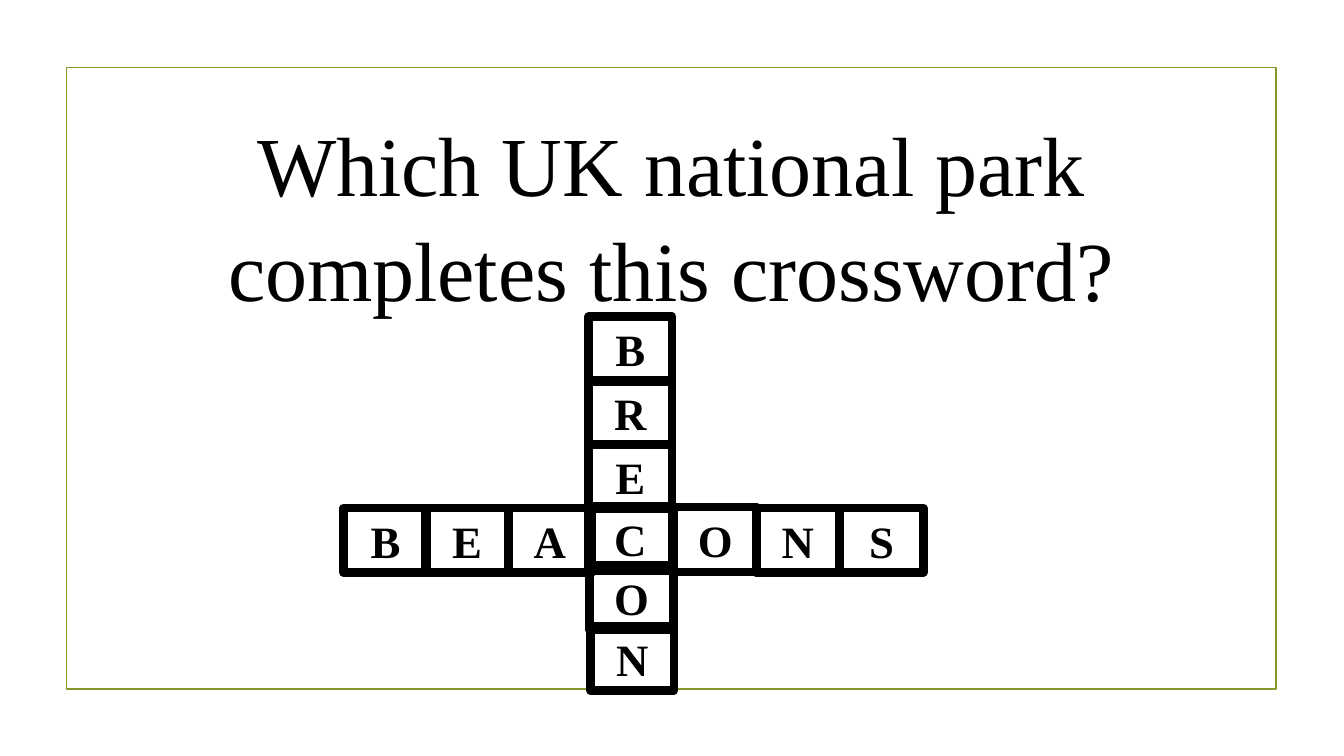
from pptx import Presentation
from pptx.dml.color import RGBColor
from pptx.enum.shapes import MSO_SHAPE
from pptx.enum.text import MSO_ANCHOR, MSO_AUTO_SIZE, PP_ALIGN
from pptx.util import Cm, Pt
from lxml.etree import SubElement
from pptx.oxml.ns import qn

QUESTION = "Which UK national park completes this crossword?"
# Each cell: letter, left and top in centimetres
DOWN = [
    ("B", 14.83, 7.98), ("R", 14.83, 9.58), ("E", 14.83, 11.2),
    ("C", 14.83, 12.75), ("O", 14.86, 14.25), ("N", 14.88, 15.77),
]
# The shared letter C belongs to the word going down
ACROSS = [
    ("B", 8.66, 12.8), ("E", 10.72, 12.8), ("A", 12.8, 12.8),
    ("O", 16.97, 12.78), ("N", 19.05, 12.8), ("S", 21.16, 12.8),
]
CELL_WIDTH, CELL_HEIGHT = Cm(2.11), Cm(1.63)
FONT = "Times New Roman"
BLACK = RGBColor(0x00, 0x00, 0x00)
OLIVE = RGBColor(0x83, 0x99, 0x2A)


def add_outline(slide, left, top, width, height, color, weight):
    shape = slide.shapes.add_shape(MSO_SHAPE.RECTANGLE, left, top, width, height)
    shape.shadow.inherit = False
    shape.fill.background()
    shape.line.color.rgb = color
    shape.line.width = Pt(weight)
    return shape


def write_centred(shape, text, size, bold, anchor):
    frame = shape.text_frame
    frame.word_wrap = True
    frame.auto_size = MSO_AUTO_SIZE.NONE
    frame.vertical_anchor = anchor
    paragraph = frame.paragraphs[0]
    paragraph.alignment = PP_ALIGN.CENTER
    run = paragraph.add_run()
    run.text = text
    run.font.name = FONT
    run.font.size = Pt(size)
    run.font.bold = bold
    run.font.color.rgb = BLACK
    return paragraph


def add_cell(slide, letter, left, top):
    cell = add_outline(slide, Cm(left), Cm(top), CELL_WIDTH, CELL_HEIGHT, BLACK, 6)
    SubElement(cell.line._get_or_add_ln(), qn("a:round"))
    write_centred(cell, letter, 32, True, MSO_ANCHOR.MIDDLE)


def main():
    presentation = Presentation()
    presentation.slide_width, presentation.slide_height = Cm(33.87), Cm(19.05)
    slide = presentation.slides.add_slide(presentation.slide_layouts[5])

    add_outline(slide, Cm(1.68), Cm(1.7), Cm(30.48), Cm(15.67), OLIVE, 1.25)

    title = slide.shapes.title
    title.left, title.top = Cm(1.7), Cm(2.57)
    title.width, title.height = Cm(30.43), Cm(5.38)
    heading = write_centred(title, QUESTION, 60, False, MSO_ANCHOR.TOP)
    heading.line_spacing = 1.05

    for letter, left, top in DOWN + ACROSS:
        add_cell(slide, letter, left, top)

    presentation.save("out.pptx")


if __name__ == "__main__":
    main()
